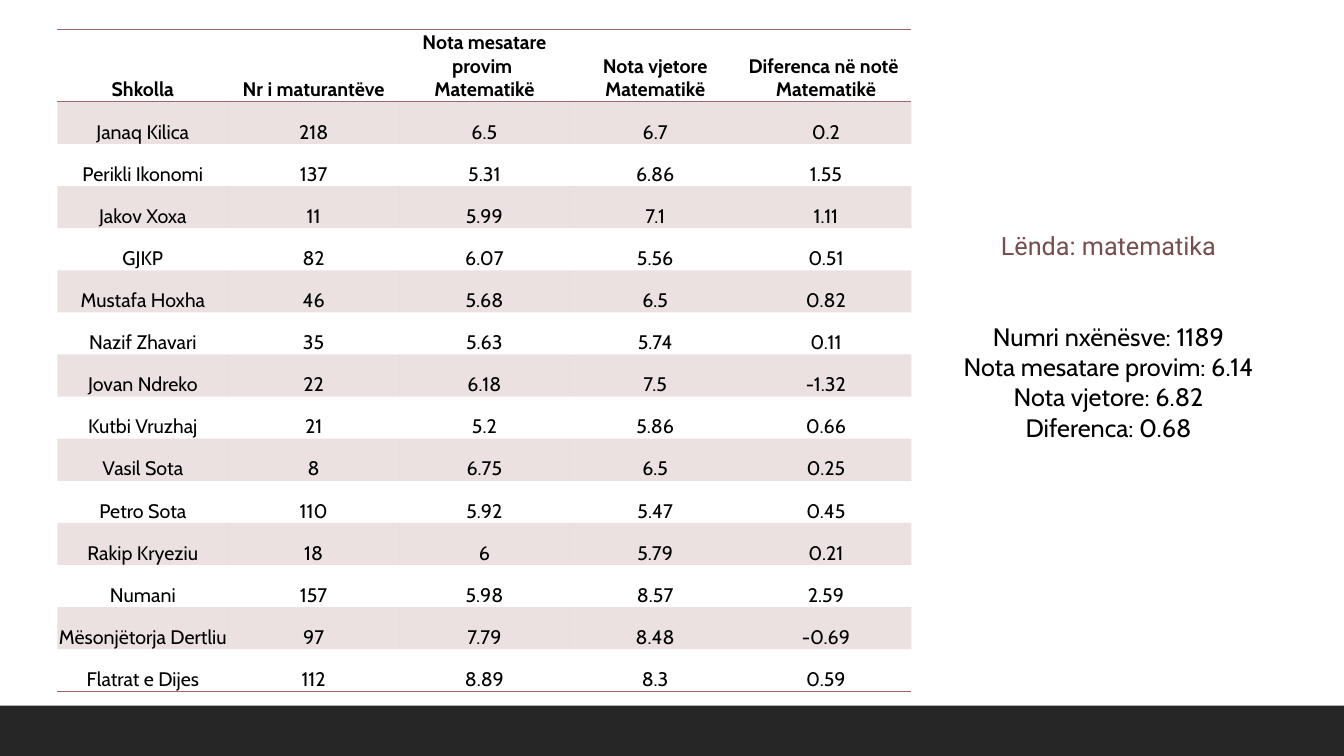
from lxml.etree import SubElement
from pptx import Presentation
from pptx.dml.color import RGBColor
from pptx.enum.shapes import MSO_SHAPE
from pptx.enum.text import MSO_ANCHOR, PP_ALIGN
from pptx.oxml.ns import qn
from pptx.util import Inches, Pt

ROSE, DARK_ROSE, BLACK, CHARCOAL = "9C6A6A", "764E4E", "000000", "262626"
PLAIN_TABLE_STYLE = "{2D5ABB26-0587-4C30-8999-92F81FD0307C}"
HEADER_HEIGHT, TABLE_HEIGHT = 0.72, 6.57

HEADERS = ["Shkolla", "Nr i maturantëve", "Nota mesatare provim \nMatematikë",
           "Nota vjetore\nMatematikë", "Diferenca në notë \nMatematikë"]
SCHOOLS = [
    ["Janaq Kilica", "218", "6.5", "6.7", "0.2"],
    ["Perikli Ikonomi", "137", "5.31", "6.86", "1.55"],
    ["Jakov Xoxa", "11", "5.99", "7.1", "1.11"],
    ["GJKP", "82", "6.07", "5.56", "0.51"],
    ["Mustafa Hoxha", "46", "5.68", "6.5", "0.82"],
    ["Nazif Zhavari", "35", "5.63", "5.74", "0.11"],
    ["Jovan Ndreko", "22", "6.18", "7.5", "-1.32"],
    ["Kutbi Vruzhaj", "21", "5.2", "5.86", "0.66"],
    ["Vasil Sota", "8", "6.75", "6.5", "0.25"],
    ["Petro Sota", "110", "5.92", "5.47", "0.45"],
    ["Rakip Kryeziu", "18", "6", "5.79", "0.21"],
    ["Numani", "157", "5.98", "8.57", "2.59"],
    ["Mësonjëtorja Dertliu", "97", "7.79", "8.48", "-0.69"],
    ["Flatrat e Dijes", "112", "8.89", "8.3", "0.59"],
]
SUMMARY = ["Lënda: matematika", "Numri nxënësve: 1189", "Nota mesatare provim: 6.14",
           "Nota vjetore: 6.82", "Diferenca: 0.68"]


def write(p, text, size=14, font="Cabin", color=BLACK, bold=False):
    """Fill a centred paragraph; a newline in the text becomes a line break."""
    p.alignment = PP_ALIGN.CENTER
    for i, line in enumerate(text.split("\n")):
        if i:
            p.add_line_break()
        r = p.add_run()
        r.text = line
        r.font.size, r.font.name, r.font.bold = Pt(size), font, bold
        r.font.color.rgb = RGBColor.from_string(color)


def add_border(cell, side):
    """Rule one side of a cell; side is the tag "a:lnT" or "a:lnB"."""
    ln = SubElement(cell._tc.get_or_add_tcPr(), qn(side), w=str(Pt(1)))
    fill = SubElement(ln, qn("a:solidFill"))
    SubElement(fill, qn("a:srgbClr"), val=ROSE)


prs = Presentation()
prs.slide_width, prs.slide_height = Inches(13.33), Inches(7.5)
s = prs.slides.add_slide(prs.slide_layouts[6])

footer = s.shapes.add_shape(MSO_SHAPE.RECTANGLE, 0, Inches(7), prs.slide_width, Inches(0.5))
footer.shadow.inherit = False
footer.fill.solid()
footer.fill.fore_color.rgb = RGBColor.from_string(CHARCOAL)
footer.line.fill.background()

rows = [HEADERS] + SCHOOLS
frame = s.shapes.add_table(len(rows), len(HEADERS), Inches(0.57), Inches(0.29),
                           Inches(8.47), Inches(TABLE_HEIGHT))
table = frame.table
table._tbl.tblPr.find(qn("a:tableStyleId")).text = PLAIN_TABLE_STYLE
school_height = Inches((TABLE_HEIGHT - HEADER_HEIGHT) / len(SCHOOLS))

for i, values in enumerate(rows):
    table.rows[i].height = school_height if i else Inches(HEADER_HEIGHT)
    for j, value in enumerate(values):
        cell = table.cell(i, j)
        cell.vertical_anchor = MSO_ANCHOR.BOTTOM
        cell.margin_left = cell.margin_right = cell.margin_top = Inches(0.01)
        cell.margin_bottom = 0
        write(cell.text_frame.paragraphs[0], value, bold=i == 0)
        if i == 0:
            add_border(cell, "a:lnT")
        if i in (0, len(SCHOOLS)):
            add_border(cell, "a:lnB")
        if i % 2:
            cell.fill.solid()
            cell.fill.fore_color.rgb = RGBColor.from_string(ROSE)
            tint = cell._tc.tcPr.find(qn("a:solidFill")).find(qn("a:srgbClr"))
            SubElement(tint, qn("a:alpha"), val="20000")
        else:
            cell.fill.background()

tf = s.shapes.add_textbox(Inches(9.23), Inches(2.24), Inches(3.53), Inches(2.83)).text_frame
tf.word_wrap = True
write(tf.paragraphs[0], SUMMARY[0], size=18, font="Roboto", color=DARK_ROSE)
for i, fact in enumerate(SUMMARY[1:]):
    p = tf.add_paragraph()
    p.space_before = Pt(0 if i else 43)
    write(p, fact, size=18)

prs.save("out.pptx")
